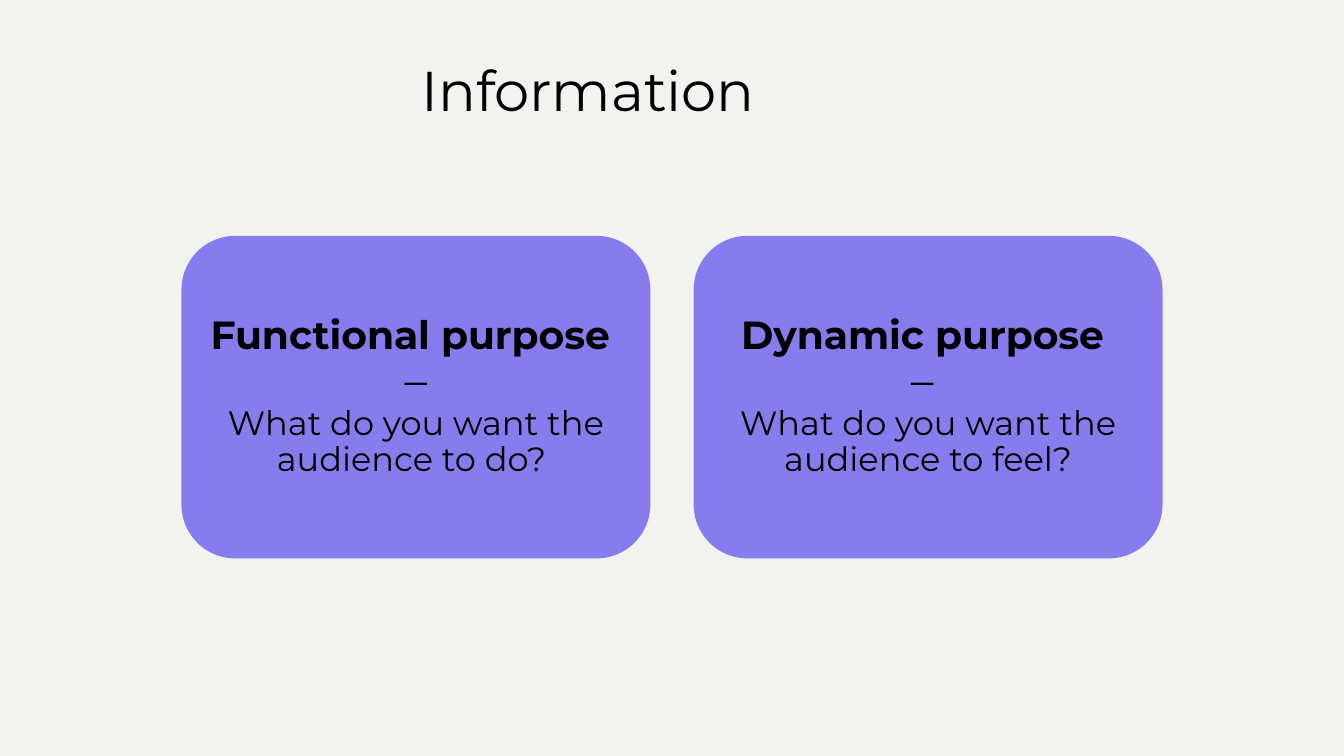
from pptx import Presentation
from pptx.dml.color import RGBColor
from pptx.enum.shapes import MSO_SHAPE
from pptx.enum.text import MSO_ANCHOR, PP_ALIGN
from pptx.util import Pt

ROUNDED = MSO_SHAPE.ROUNDED_RECTANGLE
TOP, MIDDLE = MSO_ANCHOR.TOP, MSO_ANCHOR.MIDDLE
LEFT, CENTER = PP_ALIGN.LEFT, PP_ALIGN.CENTER

PX = 9144  # EMU per px, 100 px to the inch
FONT = "Montserrat"
COLORS = {"background": "F0F3EE", "card": "877CEE", "text": "000000"}

presentation = Presentation()
presentation.slide_width = 1333 * PX
presentation.slide_height = 750 * PX
slide = presentation.slides.add_slide(presentation.slide_layouts[6])
slide.background.fill.solid()
slide.background.fill.fore_color.rgb = RGBColor.from_string(COLORS["background"])


def add_text(lines, *, box, inset, left_inset, align=LEFT, anchor=TOP, spacing=1.0):
    """Add one paragraph whose lines are (text, size, bold)."""
    text_box = slide.shapes.add_textbox(*(length * PX for length in box))
    frame = text_box.text_frame
    frame.word_wrap = True
    frame.vertical_anchor = anchor
    frame.margin_left = left_inset * PX
    frame.margin_top = frame.margin_right = frame.margin_bottom = inset * PX
    paragraph = frame.paragraphs[0]
    paragraph.alignment = align
    paragraph.line_spacing = spacing
    for index, (text, size, bold) in enumerate(lines):
        if index:
            paragraph.add_line_break()
        run = paragraph.add_run()
        run.text = text
        run.font.name = FONT
        run.font.size = Pt(size)
        run.font.bold = bold
        run.font.color.rgb = RGBColor.from_string(COLORS["text"])


# Title
add_text([("Information", 40, False)], box=(165, 45, 892, 63), inset=10, left_inset=253)

# Purpose cards
CARD_LEFT, CARD_TOP, CARD_WIDTH, CARD_HEIGHT = 180, 234, 465, 320
CARD_STEP = 508
CARD_PADDING = 16
purposes = [
    ("Functional purpose ", "–", "What do you want the audience to do? "),
    ("Dynamic purpose ", "– ", "What do you want the audience to feel?"),
]
for column, (heading, dash, question) in enumerate(purposes):
    left = CARD_LEFT + column * CARD_STEP
    card = slide.shapes.add_shape(
        ROUNDED, left * PX, CARD_TOP * PX, CARD_WIDTH * PX, CARD_HEIGHT * PX)
    card.shadow.inherit = False
    card.fill.solid()
    card.fill.fore_color.rgb = RGBColor.from_string(COLORS["card"])
    card.line.fill.background()
    add_text(
        [(heading, 28, True), (dash, 32, False), (question, 24, False)],
        box=(left + CARD_PADDING, CARD_TOP + CARD_PADDING,
             CARD_WIDTH - 2 * CARD_PADDING, CARD_HEIGHT - 2 * CARD_PADDING),
        inset=12, left_inset=12, align=CENTER, anchor=MIDDLE, spacing=0.9)

presentation.save("out.pptx")
